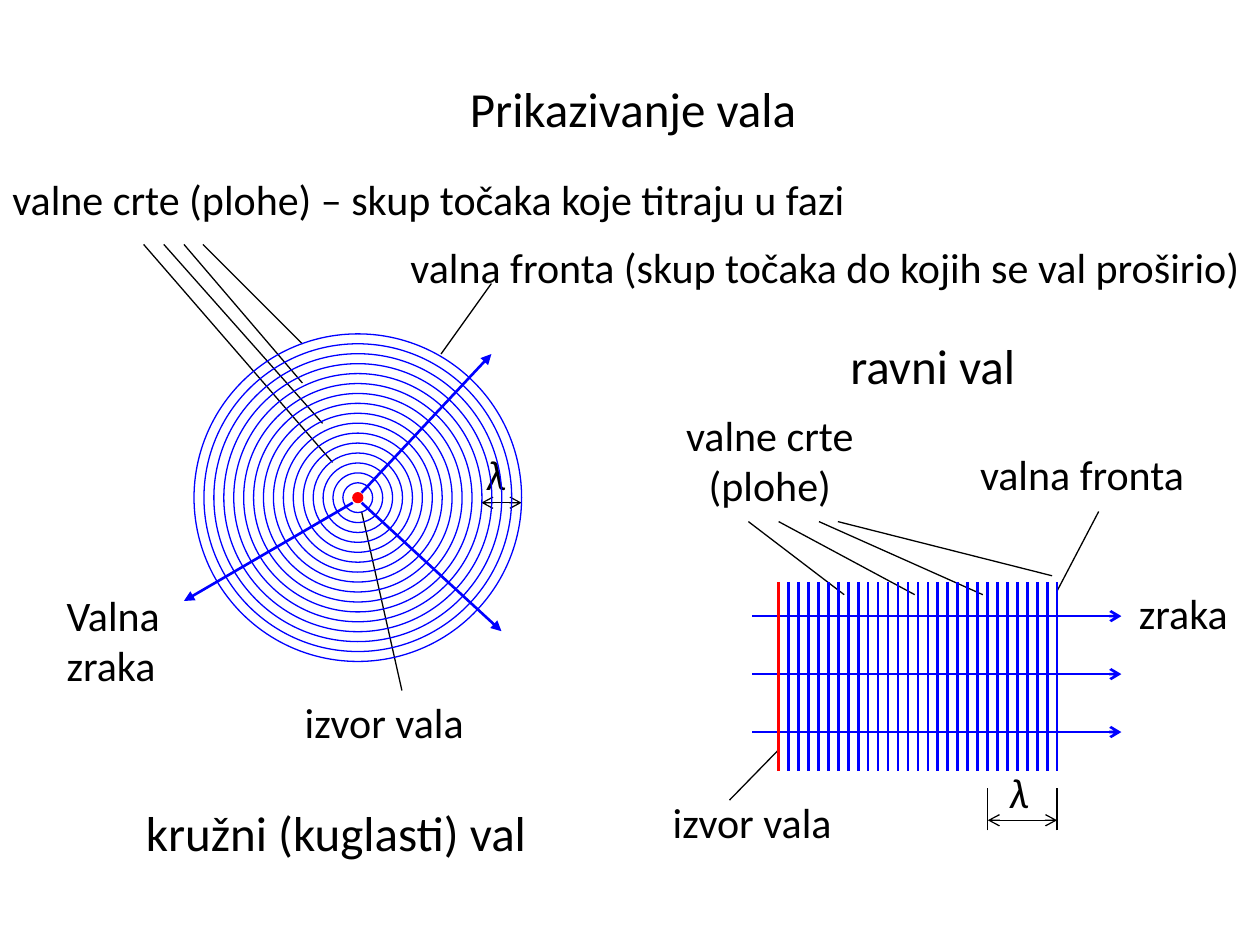
from dataclasses import dataclass

import lxml.etree
import pptx
import pptx.dml.color
import pptx.enum.shapes
import pptx.enum.text
import pptx.oxml.ns
import pptx.util

Inches = pptx.util.Inches
Align = pptx.enum.text.PP_ALIGN

COLORS = {"text": "000000", "wave": "0000FF", "source": "FF0000"}
THIN, THICK = 0.75, 1.5
CENTER_X, CENTER_Y = 2.84, 3.95
RING_COUNT, OUTER_RADIUS = 16, 1.3
RING_GAP = OUTER_RADIUS / (RING_COUNT + 0.5)
SOURCE_X, FRONT_X = 6.18, 8.39
WAVE_TOP, WAVE_BOTTOM = 4.62, 6.12
WAVE_STEPS = 28
WAVELENGTH_X = 7.84


@dataclass(frozen=True)
class Line:
    x1: float
    y1: float
    x2: float
    y2: float
    color: str = "text"
    width: float = THIN
    head: str = ""
    tail: str = ""


@dataclass(frozen=True)
class Label:
    text: str
    left: float
    top: float
    width: float
    height: float = 0.5
    size: int = 24
    italic: bool = False
    align: Align = Align.LEFT


def rgb(name: str) -> pptx.dml.color.RGBColor:
    return pptx.dml.color.RGBColor.from_string(COLORS[name])


def draw_line(slide, line: Line) -> None:
    connector = slide.shapes.add_connector(
        pptx.enum.shapes.MSO_CONNECTOR.STRAIGHT,
        Inches(line.x1), Inches(line.y1), Inches(line.x2), Inches(line.y2))
    connector.line.color.rgb = rgb(line.color)
    connector.line.width = pptx.util.Pt(line.width)
    stroke = connector.line._get_or_add_ln()
    for end, arrow in (("a:headEnd", line.head), ("a:tailEnd", line.tail)):
        if arrow:
            lxml.etree.SubElement(stroke, pptx.oxml.ns.qn(end), type=arrow)
    lxml.etree.SubElement(connector._element.spPr, pptx.oxml.ns.qn("a:effectLst"))


def draw_circle(slide, radius: float, color: str, filled: bool = False) -> None:
    circle = slide.shapes.add_shape(
        pptx.enum.shapes.MSO_SHAPE.OVAL,
        Inches(CENTER_X - radius), Inches(CENTER_Y - radius),
        Inches(2 * radius), Inches(2 * radius))
    circle.shadow.inherit = False
    circle.line.color.rgb = rgb(color)
    circle.line.width = pptx.util.Pt(THIN)
    if filled:
        circle.fill.solid()
        circle.fill.fore_color.rgb = rgb(color)
    else:
        circle.fill.background()


def write_label(shape, label: Label) -> None:
    shape.left, shape.top = Inches(label.left), Inches(label.top)
    shape.width, shape.height = Inches(label.width), Inches(label.height)
    frame = shape.text_frame
    frame.text = label.text
    frame.word_wrap = True
    frame.auto_size = pptx.enum.text.MSO_AUTO_SIZE.NONE
    frame.vertical_anchor = pptx.enum.text.MSO_ANCHOR.MIDDLE
    for paragraph in frame.paragraphs:
        paragraph.alignment = label.align
        paragraph.font.name = "Calibri"
        paragraph.font.size = pptx.util.Pt(label.size)
        paragraph.font.italic = label.italic
        paragraph.font.color.rgb = rgb("text")


TITLE = Label("Prikazivanje vala", 3.63, 0.57, 3.12, 0.57, 28)

LABELS = [
    Label("valne crte (plohe) – skup točaka koje titraju u fazi", 0, 1.33, 6.87),
    Label("valna fronta (skup točaka do kojih se val proširio)", 3.16, 1.87, 6.84),
    Label("Valna zraka", 0.43, 4.62, 1.36, 0.91),
    Label("izvor vala", 2.32, 5.48, 1.61),
    Label("λ", 3.76, 3.51, 0.45, italic=True),
    Label("kružni (kuglasti) val", 1.06, 6.32, 3.54, 0.57, 28),
    Label("ravni val", 6.65, 2.61, 1.65, 0.57, 28),
    Label("valne crte\n(plohe)", 5.24, 3.2, 1.74, 0.9, align=Align.CENTER),
    Label("valna fronta", 7.68, 3.51, 1.94),
    Label("zraka", 8.94, 4.61, 1.02),
    Label("izvor vala", 5.24, 6.27, 1.61),
    Label("λ", 7.91, 6.03, 0.45, italic=True),
]

CIRCULAR_RAYS = [
    Line(*ends, "wave", THICK, tail="triangle")
    for ends in ((2.87, 3.91, 3.9, 2.81), (2.8, 3.99, 1.46, 4.77),
                 (2.87, 3.99, 3.98, 5.01))
]
PLANE_RAYS = [
    Line(5.97, y, 8.9, y, "wave", THICK, tail="arrow") for y in (4.89, 5.35, 5.81)
]
POINTERS = [
    Line(*ends)
    for ends in (
        (2.64, 3.67, 1.14, 1.94), (2.56, 3.36, 1.3, 1.94),
        (2.4, 3.04, 1.46, 1.94), (2.4, 2.73, 1.61, 1.94),
        (3.5, 2.81, 3.9, 2.25), (3.19, 5.48, 2.87, 4.06),
        (6.7, 4.72, 5.94, 4.14), (7.26, 4.72, 6.18, 4.14),
        (7.8, 4.72, 6.5, 4.14), (8.35, 4.57, 6.65, 4.14),
        (FRONT_X, 4.69, 8.72, 4.06), (5.79, 6.35, SOURCE_X, 5.95))
]
WAVELENGTHS = [
    Line(3.82, 3.99, 4.14, 3.99, head="arrow", tail="arrow"),
    Line(WAVELENGTH_X, 6.51, FRONT_X, 6.51, head="arrow", tail="arrow"),
    *(Line(x, 6.59, x, 6.25) for x in (WAVELENGTH_X, FRONT_X)),
]
SOURCE_MARK = Line(CENTER_X, 3.9, CENTER_X, 3.9, "wave", head="oval", tail="oval")


def main() -> None:
    presentation = pptx.Presentation()
    presentation.slide_width, presentation.slide_height = Inches(10), Inches(7.5)
    slide = presentation.slides.add_slide(presentation.slide_layouts[5])

    write_label(slide.shapes.title, TITLE)
    for line in [SOURCE_MARK, *CIRCULAR_RAYS, *PLANE_RAYS, *POINTERS, *WAVELENGTHS]:
        draw_line(slide, line)
    for label in LABELS:
        write_label(slide.shapes.add_textbox(0, 0, 0, 0), label)

    draw_circle(slide, RING_GAP / 2, "source", filled=True)
    for ring in range(1, RING_COUNT + 1):
        draw_circle(slide, RING_GAP * (ring + 0.5), "wave")

    for step in range(WAVE_STEPS + 1):
        x = SOURCE_X + step * (FRONT_X - SOURCE_X) / WAVE_STEPS
        color = "wave" if step else "source"
        draw_line(slide, Line(x, WAVE_TOP, x, WAVE_BOTTOM, color, THICK))

    presentation.save("out.pptx")


if __name__ == "__main__":
    main()
